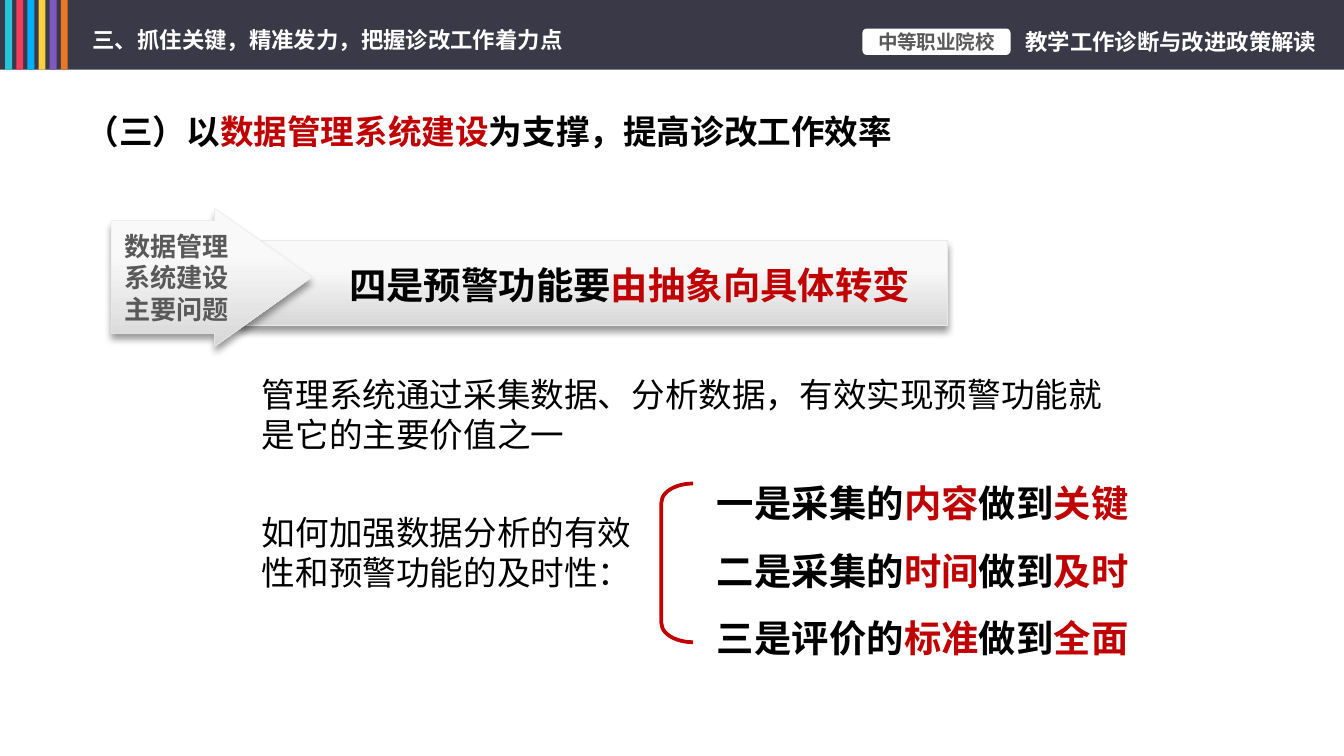
from dataclasses import dataclass
from itertools import cycle

from lxml.etree import SubElement
from pptx import Presentation
from pptx.dml.color import RGBColor
from pptx.enum.shapes import MSO_SHAPE as SHAPE
from pptx.enum.text import MSO_ANCHOR as ANCHOR, MSO_AUTO_SIZE as AUTO, PP_ALIGN as ALIGN
from pptx.oxml.ns import qn
from pptx.util import Cm, Pt


@dataclass(frozen=True)
class Theme:
    font: str = "Noto Sans CJK SC"
    ink: str = "000000"
    accent: str = "C00000"
    white: str = "FFFFFF"
    grey: str = "595959"
    header: str = "3A3947"
    edge: str = "EAEAEA"
    gradient: tuple = ((0.33, "F9F9F9"), (1, "D7D7D7"))
    stripes: tuple = ("26C6DA", "F23E5C", "00B0FF", "FFCD40", "7E57C1", "EC7825")
    tag: float = 10.5
    small: int = 12
    label: int = 14
    text: int = 18
    key: int = 20


class Deck:
    def __init__(self, prs, theme):
        self.theme = theme
        self.s = prs.slides.add_slide(prs.slide_layouts[1])

    def add_runs(self, sp, paras, size, colors, bold=True, align=ALIGN.LEFT,
                 anchor=ANCHOR.TOP, wrap=True, insets=(0.25, 0.13), spacing=1):
        tf = sp.text_frame
        tf.auto_size = AUTO.NONE
        tf.word_wrap = wrap
        tf.vertical_anchor = anchor
        tf.margin_left = tf.margin_right = Cm(insets[0])
        tf.margin_top = tf.margin_bottom = Cm(insets[1])
        for i, runs in enumerate(paras):
            p = tf.add_paragraph() if i else tf.paragraphs[0]
            p.alignment = align
            p.line_spacing = spacing
            p.space_before = Pt(0)
            for text, color in zip(runs, cycle(colors)):
                r = p.add_run()
                r.text = text
                r.font.size = Pt(size)
                r.font.bold = bold
                r.font.color.rgb = RGBColor.from_string(color)
                r.font.name = self.theme.font
                SubElement(r.font._element, qn("a:ea"), typeface=self.theme.font)

    def place(self, sp, box):
        sp.left, sp.top, sp.width, sp.height = map(Cm, box)
        return sp

    def title(self, box, runs):
        sp = self.place(self.s.shapes.title, box)
        self.add_runs(sp, [runs], self.theme.text, (self.theme.ink, self.theme.accent),
                      anchor=ANCHOR.MIDDLE, wrap=False)

    def points(self, box, paras):
        sp = self.place(self.s.placeholders[1], box)
        self.add_runs(sp, paras, self.theme.key, (self.theme.ink, self.theme.accent),
                      wrap=False, spacing=1.5)
        for p in sp.text_frame.paragraphs:
            pPr = p._p.get_or_add_pPr()
            pPr.set("marL", "0")
            pPr.set("indent", "0")
            SubElement(pPr, qn("a:buNone"))

    def text(self, box, runs, size, colors, **style):
        sp = self.s.shapes.add_textbox(*map(Cm, box))
        self.add_runs(sp, [runs], size, colors, **style)

    def shape(self, kind, box, fill):
        sp = self.s.shapes.add_shape(kind, *map(Cm, box))
        sp.shadow.inherit = False
        sp.fill.solid()
        sp.fill.fore_color.rgb = RGBColor.from_string(fill)
        sp.line.fill.background()
        return sp

    def raise_up(self, sp):
        sp.fill.gradient()
        sp.fill.gradient_angle = 270
        for stop, (position, color) in zip(sp.fill.gradient_stops, self.theme.gradient):
            stop.position = position
            stop.color.rgb = RGBColor.from_string(color)
        sp.line.color.rgb = RGBColor.from_string(self.theme.edge)
        sp.line.width = Pt(0.25)
        sp.shadow.inherit = False
        effects = sp._element.spPr.find(qn("a:effectLst"))
        shadow = SubElement(effects, qn("a:outerShdw"), blurRad=str(Pt(4)),
                            dist=str(Pt(3)), dir="5400000", algn="t", rotWithShape="0")
        color = SubElement(shadow, qn("a:srgbClr"), val=self.theme.ink)
        SubElement(color, qn("a:alpha"), val="40000")

    def banner(self, box):
        self.raise_up(self.shape(SHAPE.RECTANGLE, box, self.theme.white))

    def arrow(self, points, lines):
        start, *rest = [(Cm(x), Cm(y)) for x, y in points]
        builder = self.s.shapes.build_freeform(*start)
        builder.add_line_segments(rest, close=True)
        sp = builder.convert_to_shape()
        self.raise_up(sp)
        self.add_runs(sp, [[line] for line in lines], self.theme.label,
                      (self.theme.grey,), anchor=ANCHOR.MIDDLE)

    def bracket(self, box):
        sp = self.shape(SHAPE.LEFT_BRACKET, box, self.theme.white)
        sp.adjustments[0] = 0.6
        sp.fill.background()
        sp.line.color.rgb = RGBColor.from_string(self.theme.accent)
        sp.line.width = Pt(2)

    def header(self, section, tag, topic):
        t = self.theme
        self.shape(SHAPE.RECTANGLE, (0, 0, 25.4, 1.32), t.header)
        for i, color in enumerate(t.stripes):
            self.shape(SHAPE.RECTANGLE, (0.1 + 0.21 * i, 0, 0.13, 1.32), color)
        self.text((1.5, 0.36, 9.5, 0.76), [section], t.small, (t.white,),
                  anchor=ANCHOR.MIDDLE, wrap=False)
        pill = self.shape(SHAPE.ROUNDED_RECTANGLE, (16.3, 0.54, 2.8, 0.5), t.white)
        self.add_runs(pill, [[tag]], t.tag, (t.grey,), align=ALIGN.CENTER,
                      anchor=ANCHOR.MIDDLE, insets=(0.1, 0))
        self.text((19.35, 0.54, 5.56, 0.5), [topic], t.small, (t.white,),
                  align=ALIGN.CENTER, anchor=ANCHOR.MIDDLE, wrap=False, insets=(0, 0))


def main():
    prs = Presentation()
    prs.slide_width, prs.slide_height = Cm(25.4), Cm(14.29)
    t = Theme()
    deck = Deck(prs, t)
    deck.header("三、抓住关键，精准发力，把握诊改工作着力点",
                "中等职业院校", "教学工作诊断与改进政策解读")
    deck.title((1.37, 1.96, 15.9, 1.02),
               ["（三）以", "数据管理系统建设", "为支撑，提高诊改工作效率"])
    deck.banner((4.5, 4.55, 13.4, 1.6))
    deck.arrow([(4.06, 3.94), (4.06, 4.17), (2.1, 4.17), (2.1, 6.3),
                (4.06, 6.3), (4.06, 6.55), (5.9, 5.24)],
               ["数据管理", "系统建设", "主要问题"])
    deck.text((6.3, 4.83, 11.2, 1.12), ["四是预警功能要", "由抽象向具体转变"],
              t.key, (t.ink, t.accent), align=ALIGN.CENTER, wrap=False)
    deck.text((4.7, 6.93, 16.8, 1.8),
              ["管理系统通过采集数据、分析数据，有效实现预警功能就是它的主要价值之一"],
              t.text, (t.ink,), bold=False)
    deck.text((4.7, 9.55, 7.6, 1.8),
              ["如何加强数据分析的有效性和预警功能的及时性："],
              t.text, (t.ink,), bold=False)
    deck.bracket((12.5, 9.14, 0.6, 3))
    deck.points((13.3, 8.53, 8.36, 3.96),
                [["一是采集的", "内容", "做到", "关键"],
                 ["二是采集的", "时间", "做到", "及时"],
                 ["三是评价的", "标准", "做到", "全面"]])
    prs.save("out.pptx")


if __name__ == "__main__":
    main()
